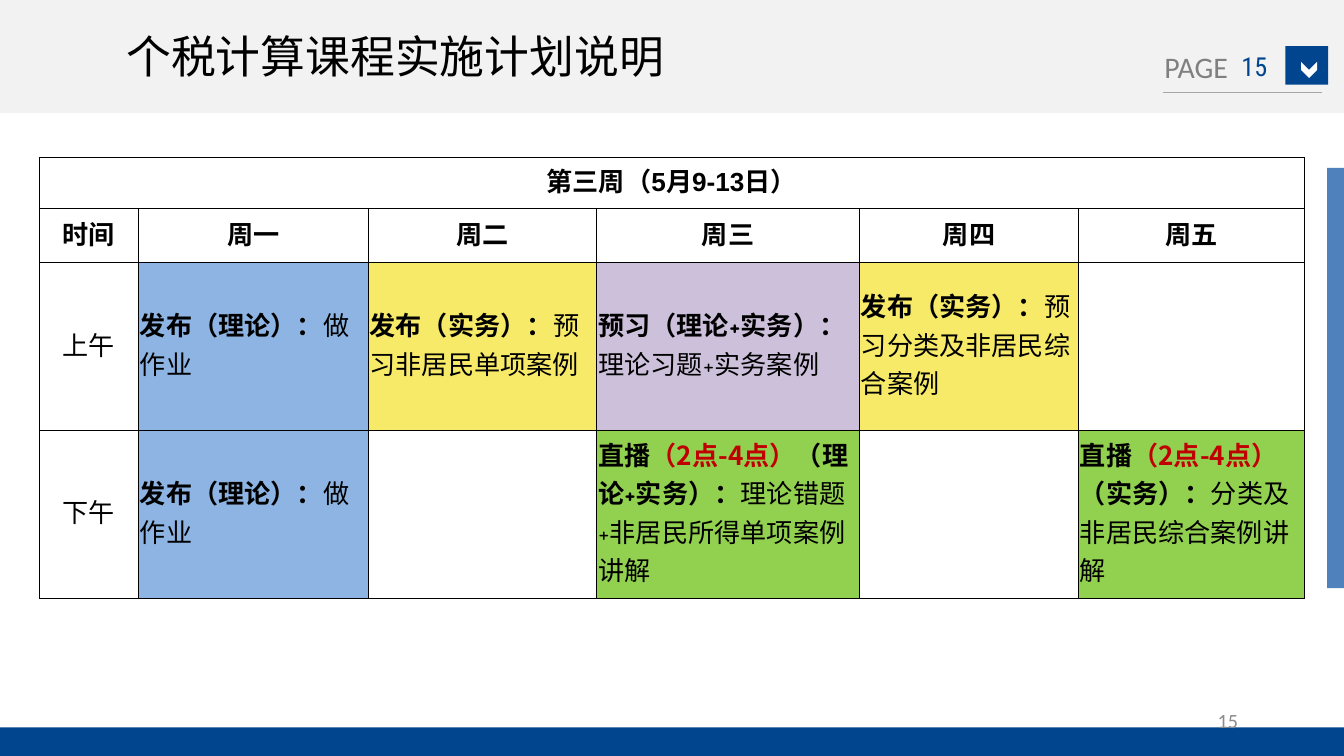
"""Build the weekly teaching plan slide for the income tax course."""
import pptx
import pptx.dml.color
import pptx.enum.shapes
import pptx.enum.text
import pptx.oxml.ns
import pptx.util
from lxml import etree

SHAPE = pptx.enum.shapes.MSO_SHAPE
ALIGN = pptx.enum.text.PP_ALIGN
ANCHOR = pptx.enum.text.MSO_ANCHOR
WIDTH = 10
HEIGHT = WIDTH * 9 / 16
CJK = "Noto Sans CJK SC"
COLORS = {
    "band": "F2F2F2", "navy": "01458E", "white": "FFFFFF", "accent": "4F81BD",
    "gray": "808080", "pale": "8C8C8C", "rule": "A6A6A6", "black": "000000",
    "red": "C00000", "theory": "8DB4E2", "practice": "F7EA68",
    "preview": "CCC0DA", "live": "92D050",
}

BLOCKS = [
    (SHAPE.RECTANGLE, (0, 0, 100, 14.93), "band", 0),
    (SHAPE.RECTANGLE, (0, 96.2, 100, 3.8), "navy", 0),
    (SHAPE.RECTANGLE, (95.63, 6.1, 3.2, 5.1), "navy", 0),
    (SHAPE.CHEVRON, (96.8, 8.18, 1.2, 2.13), "white", 90),
    (SHAPE.RECTANGLE, (98.74, 22.22, 1.26, 55.6), "accent", 0),
]
RULE = (86.55, 12.25, 11.8, 0)
LABELS = [
    ("PAGE", (85.65, 5.6, 6.8, 6.58), ("Calibri", 16, "gray"),
     {"word_wrap": False}, ALIGN.LEFT),
    ("15", (90.93, 6.1, 4.8, 5.33), ("Roboto Condensed", 14, "navy"),
     {"word_wrap": True, "vertical_anchor": ANCHOR.MIDDLE}, ALIGN.CENTER),
    ("个税计算课程实施计划说明", (8.42, 2.9, 58.1, 8.89), ("Arial", 24, "black"),
     {"word_wrap": True}, ALIGN.LEFT),
    ("15", (70.6, 92.67, 22.5, 5.33), ("Calibri", 10.8, "pale"),
     {"word_wrap": True, "vertical_anchor": ANCHOR.MIDDLE}, ALIGN.RIGHT),
]

STYLES = {
    "title": ("Arial", 14, "black", True),
    "bold": (CJK, 14, "black", True),
    "plain": (CJK, 14, "black", False),
    "alert": (CJK, 14, "red", True),
    "bold plus": ("Comic Neue", 14, "black", True),
    "plain plus": ("Comic Neue", 14, "black", False),
}
HOMEWORK = ("theory", [("发布（理论）：", "bold"), ("做作业", "plain")])
LIVE_START = [("直播", "bold"), ("（2点-4点）", "alert")]
EMPTY = (None, [])
PLAN = [
    [(None, [("第三周（5月9-13日）", "title")])] + [EMPTY] * 5,
    [(None, [(name, "bold")])
     for name in ("时间", "周一", "周二", "周三", "周四", "周五")],
    [
        (None, [("上午", "plain")]),
        HOMEWORK,
        ("practice", [("发布（实务）：", "bold"), ("预习非居民单项案例", "plain")]),
        ("preview", [("预习（理论", "bold"), ("+", "bold plus"), ("实务）：", "bold"),
                     ("理论习题", "plain"), ("+", "plain plus"), ("实务案例", "plain")]),
        ("practice", [("发布（实务）：", "bold"), ("预习分类及非居民综合案例", "plain")]),
        EMPTY,
    ],
    [
        (None, [("下午", "plain")]),
        HOMEWORK,
        EMPTY,
        ("live", LIVE_START + [
            ("（理论", "bold"), ("+", "bold plus"), ("实务）：", "bold"),
            ("理论错题", "plain"), ("+", "plain plus"), ("非居民所得单项案例讲解", "plain")]),
        EMPTY,
        ("live", LIVE_START + [("（实务）：", "bold"), ("分类及非居民综合案例讲解", "plain")]),
    ],
]
TABLE_CORNER = (2.93, 20.8)
COLUMNS = [7.38, 17.1, 17, 19.55, 16.3, 16.8]
ROWS = [6.76, 7.15, 22.22, 22.22]
CELL_FORMAT = {
    "vertical_anchor": ANCHOR.MIDDLE,
    "margin_left": pptx.util.Inches(0.01),
    "margin_right": pptx.util.Inches(0.01),
    "margin_top": pptx.util.Inches(0.01),
    "margin_bottom": pptx.util.Inches(0.05),
}


def across(share):
    return pptx.util.Inches(WIDTH * share / 100)


def down(share):
    return pptx.util.Inches(HEIGHT * share / 100)


def place(area):
    left, top, width, height = area
    return across(left), down(top), across(width), down(height)


def color(name):
    return pptx.dml.color.RGBColor.from_string(COLORS[name])


def apply(target, values):
    for name, value in values.items():
        setattr(target, name, value)


def add_tag(parent, tag, **attributes):
    return etree.SubElement(parent, pptx.oxml.ns.qn(tag), **attributes)


def write(para, text, font, size, ink, bold=False):
    span = para.add_run()
    span.text = text
    apply(span.font, {"name": font, "size": pptx.util.Pt(size), "bold": bold})
    span.font.color.rgb = color(ink)
    add_tag(span.font._element, "a:ea", typeface=CJK)


def add_block(page, kind, area, fill, rotation):
    block = page.shapes.add_shape(kind, *place(area))
    block.shadow.inherit = False
    block.rotation = rotation
    block.fill.solid()
    block.fill.fore_color.rgb = color(fill)
    block.line.fill.background()


def add_rule(page):
    left, top, width, height = place(RULE)
    rule = page.shapes.add_connector(
        pptx.enum.shapes.MSO_CONNECTOR.STRAIGHT, left, top, left + width, top + height)
    rule.line.color.rgb = color("rule")
    rule.line.width = pptx.util.Pt(0.75)
    add_tag(rule._element.spPr, "a:effectLst")


def add_label(page, text, area, style, frame_format, alignment):
    box = page.shapes.add_textbox(*place(area))
    apply(box.text_frame, frame_format)
    para = box.text_frame.paragraphs[0]
    para.alignment = alignment
    write(para, text, *style)


def fill_cell(cell, fill, spans):
    apply(cell, CELL_FORMAT)
    for side in ("a:lnL", "a:lnR", "a:lnT", "a:lnB"):
        border = add_tag(cell._tc.tcPr, side, w=str(pptx.util.Pt(0.5)))
        add_tag(add_tag(border, "a:solidFill"), "a:srgbClr", val=COLORS["black"])
    if fill:
        cell.fill.solid()
        cell.fill.fore_color.rgb = color(fill)
    else:
        cell.fill.background()
    para = cell.text_frame.paragraphs[0]
    para.alignment = ALIGN.LEFT if fill else ALIGN.CENTER
    for text, style in spans:
        write(para, text, *STYLES[style])


def add_plan(page):
    area = (*TABLE_CORNER, sum(COLUMNS), sum(ROWS))
    table = page.shapes.add_table(len(ROWS), len(COLUMNS), *place(area)).table
    apply(table, {"first_row": False, "horz_banding": False})
    for column, share in zip(table.columns, COLUMNS):
        column.width = across(share)
    for row, share, entries in zip(table.rows, ROWS, PLAN):
        row.height = down(share)
        for cell, entry in zip(row.cells, entries):
            fill_cell(cell, *entry)
    table.cell(0, 0).merge(table.cell(0, len(COLUMNS) - 1))


def main():
    deck = pptx.Presentation()
    apply(deck, {"slide_width": across(100), "slide_height": down(100)})
    page = deck.slides.add_slide(deck.slide_layouts[6])
    for block in BLOCKS:
        add_block(page, *block)
    add_rule(page)
    for label in LABELS:
        add_label(page, *label)
    add_plan(page)
    deck.save("out.pptx")


if __name__ == "__main__":
    main()
